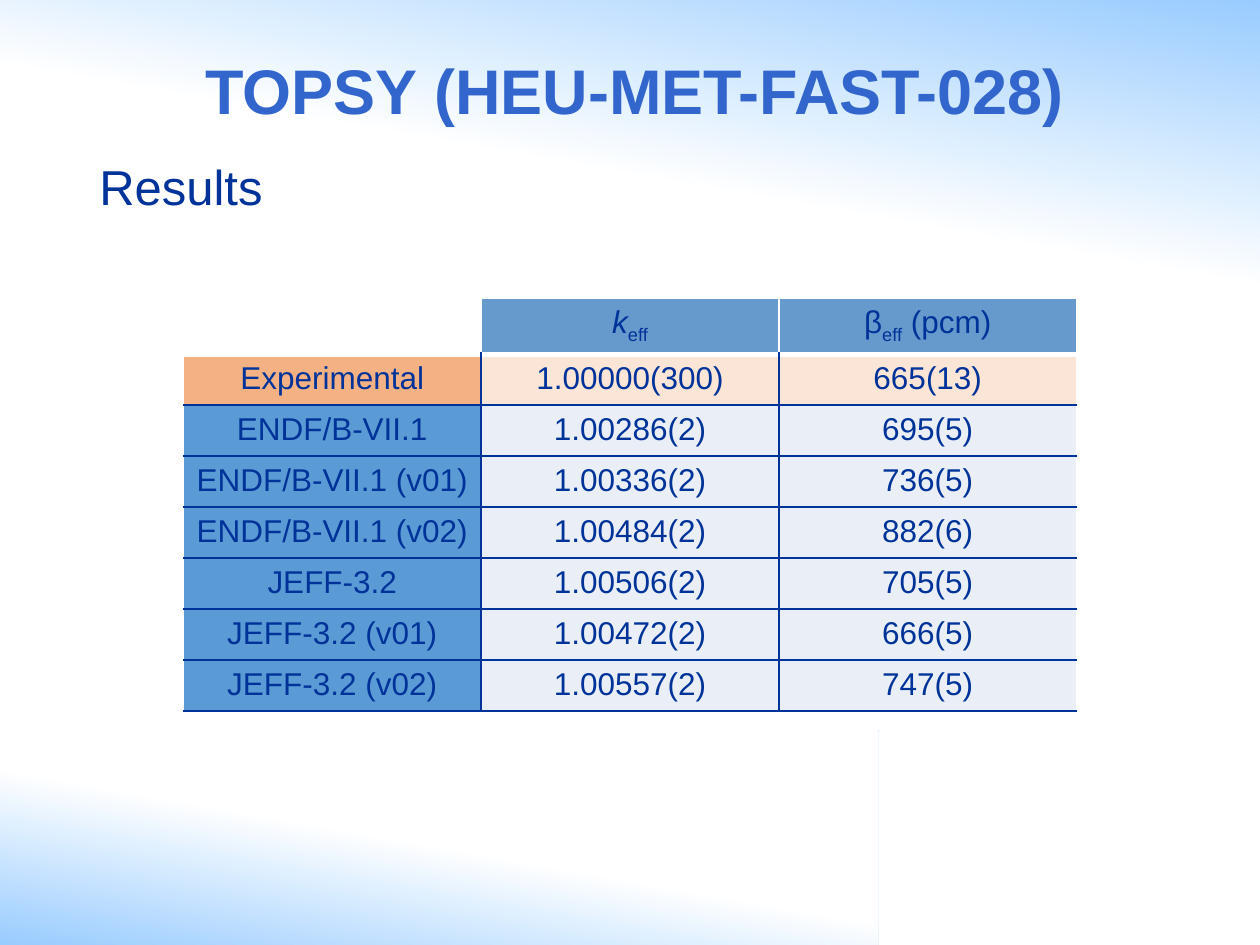
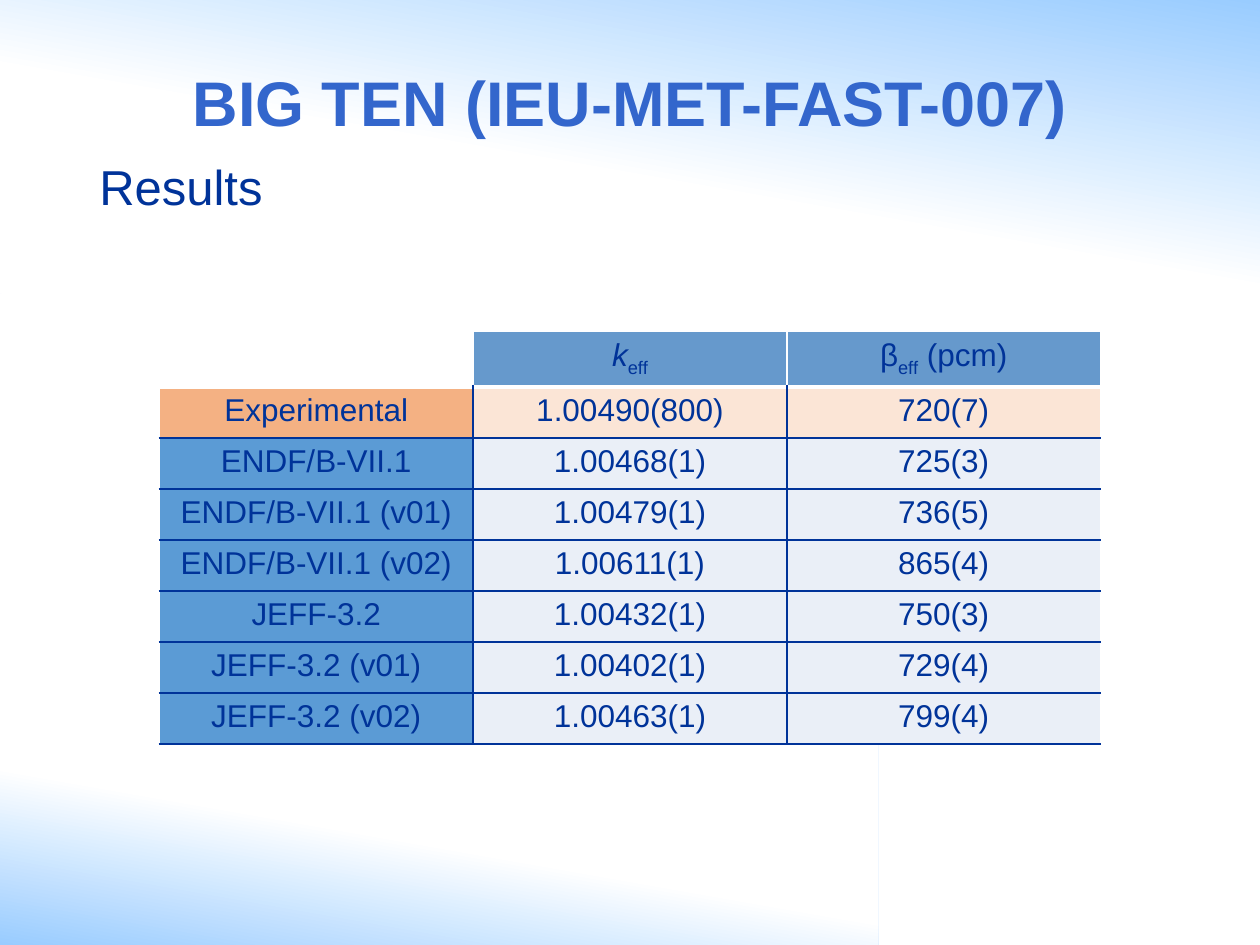
from lxml.etree import SubElement
from pptx import Presentation
from pptx.dml.color import RGBColor
from pptx.enum.shapes import MSO_SHAPE as Shape
from pptx.enum.text import MSO_ANCHOR as Anchor, PP_ALIGN as Align
from pptx.oxml.ns import qn
from pptx.util import Inches, Pt

FONT = "Arial"
COLORS = {
    "title": "3366CC", "navy": "003399", "white": "FFFFFF", "sky": "99CCFF",
    "header": "6699CC", "library": "5B9BD5", "value": "EAEFF7",
    "experiment": "F4B183", "experiment value": "FBE5D6",
}
SLIDE_WIDTH, SLIDE_HEIGHT = 10, 7.5
ROW_HEIGHT = 0.405
BANDS = [  # left, top, width, height, share where white is reached, flipped
    (0, 5.8, 6.97, 1.7, 0.48, True),
    (0, 0, SLIDE_WIDTH, 2.33, 0.56, False),
]
SUBTITLE = "Results"
SUBTITLE_BOX = (0.69, 1.14, 7.66, 0.73)

SUBSCRIPT = {"baseline": -25}
HEADERS = [
    [],
    [("k", {"italic": True}), ("eff", SUBSCRIPT)],
    [("β", {}), ("eff", SUBSCRIPT), (" (pcm)", {})],
]
ROW_NAMES = ["Experimental", "ENDF/B-VII.1", "ENDF/B-VII.1 (v01)", "ENDF/B-VII.1 (v02)",
             "JEFF-3.2", "JEFF-3.2 (v01)", "JEFF-3.2 (v02)"]
BENCHMARKS = [
    {
        "title": "TOPSY (HEU-MET-FAST-028)",
        "title_box": (0.73, 0.19, 8.62, 1.04),
        "table_top": 2.37,
        "column_width": 2.363,
        "k_eff": ["1.00000(300)", "1.00286(2)", "1.00336(2)", "1.00484(2)",
                  "1.00506(2)", "1.00472(2)", "1.00557(2)"],
        "beta_eff": ["665(13)", "695(5)", "736(5)", "882(6)", "705(5)", "666(5)", "747(5)"],
    },
    {
        "title": "BIG TEN (IEU-MET-FAST-007)",
        "title_box": (0.69, 0.43, 8.62, 0.75),
        "table_top": 2.63,
        "column_width": 2.49,
        "k_eff": ["1.00490(800)", "1.00468(1)", "1.00479(1)", "1.00611(1)",
                  "1.00432(1)", "1.00402(1)", "1.00463(1)"],
        "beta_eff": ["720(7)", "725(3)", "736(5)", "865(4)", "750(3)", "729(4)", "799(4)"],
    },
]


def rgb(name):
    return RGBColor.from_string(COLORS[name])


def add_run(paragraph, text, size=18, color="navy", bold=False, italic=False, baseline=0):
    """Add formatted text; baseline is a percentage, negative for a subscript."""
    run = paragraph.add_run()
    run.text = text
    run.font.name = FONT
    run.font.size = Pt(size)
    run.font.color.rgb = rgb(color)
    run.font.bold = bold
    run.font.italic = italic
    if baseline:
        run.font._element.set("baseline", str(baseline * 1000))


def add_text_box(slide, box, text, align=Align.LEFT, line_spacing=1.0, **text_format):
    frame = slide.shapes.add_textbox(*map(Inches, box)).text_frame
    frame.word_wrap = True
    frame.vertical_anchor = Anchor.MIDDLE
    paragraph = frame.paragraphs[0]
    paragraph.alignment = align
    paragraph.line_spacing = line_spacing
    add_run(paragraph, text, **text_format)


def add_band(slide, left, top, width, height, white_at, flipped):
    band = slide.shapes.add_shape(Shape.RECTANGLE, *map(Inches, (left, top, width, height)))
    band.shadow.inherit = False
    band.line.fill.background()
    band.fill.gradient()
    band.fill.gradient_angle = 260
    for stop, position, color in zip(band.fill.gradient_stops, (0, white_at), ("sky", "white")):
        stop.position = position
        stop.color.rgb = rgb(color)
    if flipped:
        transform = band._element.spPr.find(qn("a:xfrm"))
        transform.set("flipH", "1")
        transform.set("flipV", "1")


def set_borders(cell, row, column):
    """White around the header and the outer sides, navy between the values."""
    header = row == 0
    borders = {
        "lnL": ("white" if header or column == 0 else "navy", 1),
        "lnR": ("white" if header or column == 2 else "navy", 1),
        "lnT": ("white" if row <= 1 else "navy", 1),
        "lnB": ("white", 3) if header else ("navy", 1),
    }
    properties = cell._tc.get_or_add_tcPr()
    for side, (color, width) in borders.items():
        line = SubElement(properties, qn(f"a:{side}"), w=str(Pt(width)))
        fill = SubElement(line, qn("a:solidFill"))
        SubElement(fill, qn("a:srgbClr"), val=COLORS[color])


def fill_name(row, column):
    if row == 0:
        return "header" if column else None
    if row == 1:
        return "experiment value" if column else "experiment"
    return "value" if column else "library"


def add_results_table(slide, benchmark):
    values = zip(ROW_NAMES, benchmark["k_eff"], benchmark["beta_eff"])
    rows = [HEADERS] + [[[(text, {})] for text in row] for row in values]
    width = benchmark["column_width"] * len(HEADERS)
    table = slide.shapes.add_table(
        len(rows), len(HEADERS), Inches((SLIDE_WIDTH - width) / 2),
        Inches(benchmark["table_top"]), Inches(width), Inches(ROW_HEIGHT * len(rows))).table
    table.first_row = table.horz_banding = False
    for row, cells in enumerate(rows):
        for column, runs in enumerate(cells):
            cell = table.cell(row, column)
            set_borders(cell, row, column)
            color = fill_name(row, column)
            if color:
                cell.fill.solid()
                cell.fill.fore_color.rgb = rgb(color)
            else:
                cell.fill.background()
            paragraph = cell.text_frame.paragraphs[0]
            paragraph.alignment = Align.CENTER
            for text, text_format in runs:
                add_run(paragraph, text, **text_format)


def add_benchmark_slide(presentation, benchmark):
    slide = presentation.slides.add_slide(presentation.slide_layouts[6])
    for band in BANDS:
        add_band(slide, *band)
    add_text_box(slide, benchmark["title_box"], benchmark["title"],
                 align=Align.CENTER, size=36, color="title", bold=True)
    add_results_table(slide, benchmark)
    add_text_box(slide, SUBTITLE_BOX, SUBTITLE, line_spacing=0.9, size=28)


def main():
    presentation = Presentation()
    presentation.slide_width = Inches(SLIDE_WIDTH)
    presentation.slide_height = Inches(SLIDE_HEIGHT)
    for benchmark in BENCHMARKS:
        add_benchmark_slide(presentation, benchmark)
    presentation.save("out.pptx")


if __name__ == "__main__":
    main()
